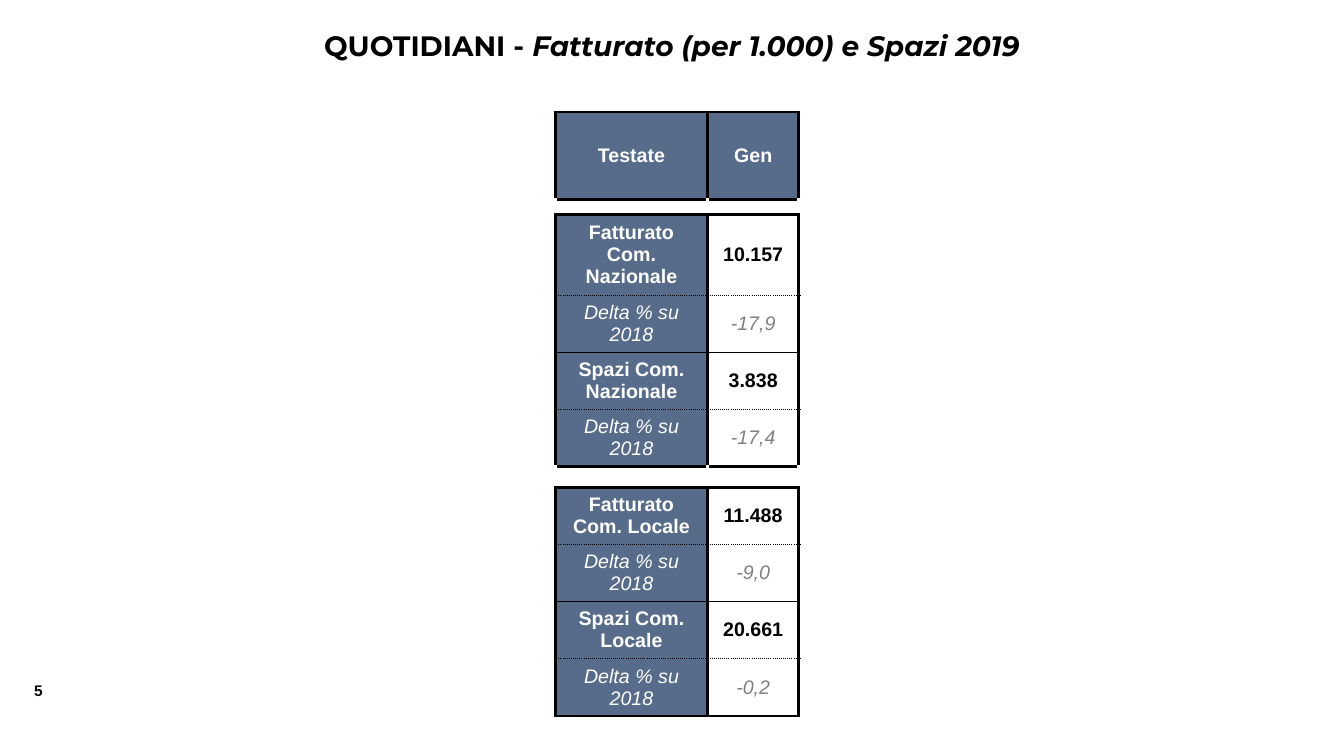
from lxml import etree
from pptx import Presentation
from pptx.dml.color import RGBColor
from pptx.enum import text
from pptx.oxml import ns
from pptx.util import Pt

BLACK = RGBColor(0x00, 0x00, 0x00)
WHITE = RGBColor(0xFF, 0xFF, 0xFF)
BLUE = RGBColor(0x57, 0x6B, 0x8A)
GREY = RGBColor(0x80, 0x80, 0x80)

# Border styles: width in points and dash
THICK = (2.25, "solid")
THIN = (1, "solid")
DOTTED = (1, "sysDot")


def add_span(para, words, color, **formats):
    span = para.add_run()
    span.text = words
    span.font.color.rgb = color
    for name, value in formats.items():
        setattr(span.font, name, value)


def add_border(cell, side, style, color):
    width, dash = style
    line = etree.SubElement(cell._tc.get_or_add_tcPr(), ns.qn(f"a:ln{side}"), w=str(Pt(width)))
    fill = etree.SubElement(line, ns.qn("a:solidFill"))
    etree.SubElement(fill, ns.qn("a:srgbClr"), val=str(color))
    etree.SubElement(line, ns.qn("a:prstDash"), val=dash)


deck = Presentation()
deck.slide_width, deck.slide_height = Pt(960), Pt(540)
page = deck.slides.add_slide(deck.slide_layouts[6])

# Page number
number = page.shapes.add_textbox(Pt(17.3), Pt(483), Pt(30), Pt(21)).text_frame
number.word_wrap = False
add_span(number.paragraphs[0], "5", BLACK, name="Arial", size=Pt(11), bold=True)

# Title
title = page.shapes.add_textbox(Pt(120), Pt(16.5), Pt(720), Pt(32)).text_frame
title.word_wrap = True
heading = title.paragraphs[0]
heading.alignment = text.PP_ALIGN.CENTER
title_format = {"name": "Montserrat", "size": Pt(20), "bold": True}
add_span(heading, "QUOTIDIANI - ", BLACK, **title_format)
add_span(heading, "Fatturato (per 1.000) e Spazi 2019", BLACK, italic=True, **title_format)

# Table rows: height, label, value, border below
DELTA = "Delta % su 2018"
rows = [
    (62.4, "Testate", "Gen", THICK),
    (10.8, "", "", THICK),
    (57.2, "Fatturato Com. Nazionale", "10.157", DOTTED),
    (40.8, DELTA, "-17,9", THIN),
    (40.8, "Spazi Com. Nazionale", "3.838", DOTTED),
    (40.8, DELTA, "-17,4", THICK),
    (14.6, "", "", THICK),
    (40.8, "Fatturato Com. Locale", "11.488", DOTTED),
    (40.8, DELTA, "-9,0", THIN),
    (40.8, "Spazi Com. Locale", "20.661", DOTTED),
    (40.8, DELTA, "-0,2", THICK),
]
widths = [108.6, 65.2]
total_height = sum(row[0] for row in rows)
table = page.shapes.add_table(len(rows), len(widths), Pt(396.8), Pt(80),
                              Pt(sum(widths)), Pt(total_height)).table
table.first_row = table.horz_banding = False
for column, width in zip(table.columns, widths):
    column.width = Pt(width)

above = THICK
for index, (height, label, value, below) in enumerate(rows):
    table.rows[index].height = Pt(height)
    for position, words in enumerate((label, value)):
        cell = table.cell(index, position)
        is_blue = label and (position == 0 or index == 0)
        is_delta = label == DELTA
        side_inset, end_inset = (7.2, 3.6) if is_blue else (0, 0)
        cell_format = {
            "margin_left": Pt(side_inset), "margin_right": Pt(side_inset),
            "margin_top": Pt(end_inset), "margin_bottom": Pt(end_inset),
            "vertical_anchor": text.MSO_ANCHOR.MIDDLE,
        }
        for name, setting in cell_format.items():
            setattr(cell, name, setting)

        # Borders: the gap rows have white sides
        side_color = BLACK if label else WHITE
        for side, style, color in (("L", THICK, side_color), ("R", THICK, side_color),
                                   ("T", above, BLACK), ("B", below, BLACK)):
            add_border(cell, side, style, color)
        cell.fill.solid()
        cell.fill.fore_color.rgb = BLUE if is_blue else WHITE

        # Text: small type keeps the gap rows low
        para = cell.text_frame.paragraphs[0]
        para.alignment = text.PP_ALIGN.CENTER
        if words:
            color = WHITE if is_blue else GREY if is_delta else BLACK
            add_span(para, words, color, name="Arial", size=Pt(14),
                     bold=not is_delta, italic=is_delta)
        else:
            etree.SubElement(para._p, ns.qn("a:endParaRPr"), sz="600")
    above = below

deck.save("out.pptx")
